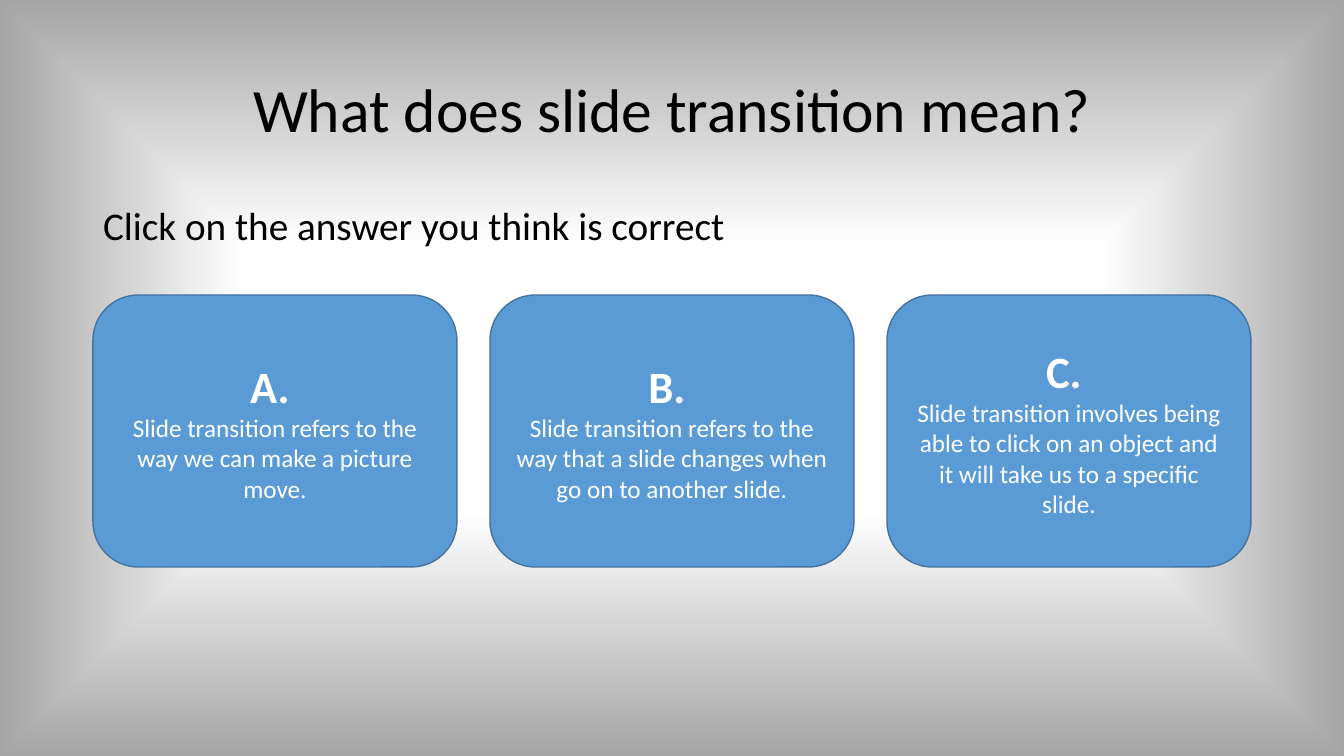
from pptx import Presentation
from pptx import util as u
from pptx.dml.color import RGBColor
from pptx.enum import shapes, text
from pptx.oxml import parse_xml
from pptx.oxml.ns import nsdecls
from lxml import etree

# Content
TITLE = "What does slide transition mean?"
PROMPT = "Click on the answer you think is correct"
ANSWERS = [
    ("A. ", "Slide transition refers to the way we can make a picture move."),
    ("B. ", "Slide transition refers to the way that a slide changes when go on to another slide."),
    ("C. ", "Slide transition involves being able to click on an object and it will take us to a specific slide."),
]

# Look
FONT = "Calibri"
COLORS = {"text": "000000", "card": "5B9BD5", "edge": "43739E", "card_text": "FFFFFF",
          "center": "FFFFFF", "rim": "A5A5A5"}
GRADIENT = [(0, "center"), (35, "center"), (100, "rim")]

# Layout in px
SLIDE_WIDTH, SLIDE_HEIGHT = 1344, 756
LEFT, CONTENT_WIDTH = 93, 1159
CARD_TOP, CARD_WIDTH, CARD_HEIGHT = 295, 364, 272
CARD_STEP = (CONTENT_WIDTH - CARD_WIDTH) // (len(ANSWERS) - 1)


def px(length):
    return u.Emu(round(length * 914400 / 100.8))


def color(name):
    return RGBColor.from_string(COLORS[name])


def place(shape, left, top, width, height):
    shape.left, shape.top, shape.width, shape.height = map(px, (left, top, width, height))


def add_run(paragraph, content, size, color_name, bold=False):
    run = paragraph.add_run()
    run.text = content
    run.font.name = FONT
    run.font.size = u.Pt(size)
    run.font.bold = bold
    run.font.color.rgb = color(color_name)


def prepare_frame(shape, anchor):
    frame = shape.text_frame
    frame.word_wrap = True
    frame.auto_size = text.MSO_AUTO_SIZE.NONE
    frame.vertical_anchor = anchor
    return frame


presentation = Presentation()
presentation.slide_width, presentation.slide_height = px(SLIDE_WIDTH), px(SLIDE_HEIGHT)
slide = presentation.slides.add_slide(presentation.slide_layouts[1])

# Background: gradient from a white centre to a grey rim
stops = "".join(f'<a:gs pos="{position * 1000}"><a:srgbClr val="{COLORS[name]}"/></a:gs>'
                for position, name in GRADIENT)
background = parse_xml(
    f'<p:bg {nsdecls("p", "a")}><p:bgPr><a:gradFill rotWithShape="1"><a:gsLst>{stops}</a:gsLst>'
    '<a:path path="shape"><a:fillToRect l="50000" t="50000" r="50000" b="50000"/></a:path>'
    '</a:gradFill><a:effectLst/></p:bgPr></p:bg>')
slide.shapes._spTree.addprevious(background)

# Title
title = slide.shapes.title
place(title, LEFT, 40, CONTENT_WIDTH, 146)
paragraph = prepare_frame(title, text.MSO_ANCHOR.MIDDLE).paragraphs[0]
paragraph.alignment = text.PP_ALIGN.CENTER
paragraph.line_spacing = 0.9
add_run(paragraph, TITLE, 44, "text")

# Prompt, without a bullet
body = slide.placeholders[1]
place(body, LEFT, 202, CONTENT_WIDTH, 480)
paragraph = prepare_frame(body, text.MSO_ANCHOR.TOP).paragraphs[0]
paragraph.line_spacing = 0.9
paragraph.space_before = u.Pt(10)
properties = paragraph._p.get_or_add_pPr()
properties.set("marL", "0")
properties.set("indent", "0")
etree.SubElement(properties, "{http://schemas.openxmlformats.org/drawingml/2006/main}buNone")
add_run(paragraph, PROMPT, 28, "text")

# Answer cards
for index, (letter, answer) in enumerate(ANSWERS):
    card = slide.shapes.add_shape(shapes.MSO_SHAPE.ROUNDED_RECTANGLE, 0, 0, 0, 0)
    place(card, LEFT + index * CARD_STEP, CARD_TOP, CARD_WIDTH, CARD_HEIGHT)
    card.shadow.inherit = False
    card.fill.solid()
    card.fill.fore_color.rgb = color("card")
    card.line.color.rgb = color("edge")
    card.line.width = u.Pt(1)
    frame = prepare_frame(card, text.MSO_ANCHOR.MIDDLE)
    heading, detail = frame.paragraphs[0], frame.add_paragraph()
    heading.alignment = detail.alignment = text.PP_ALIGN.CENTER
    add_run(heading, letter, 32, "card_text", bold=True)
    add_run(detail, answer, 18, "card_text")

presentation.save("out.pptx")
